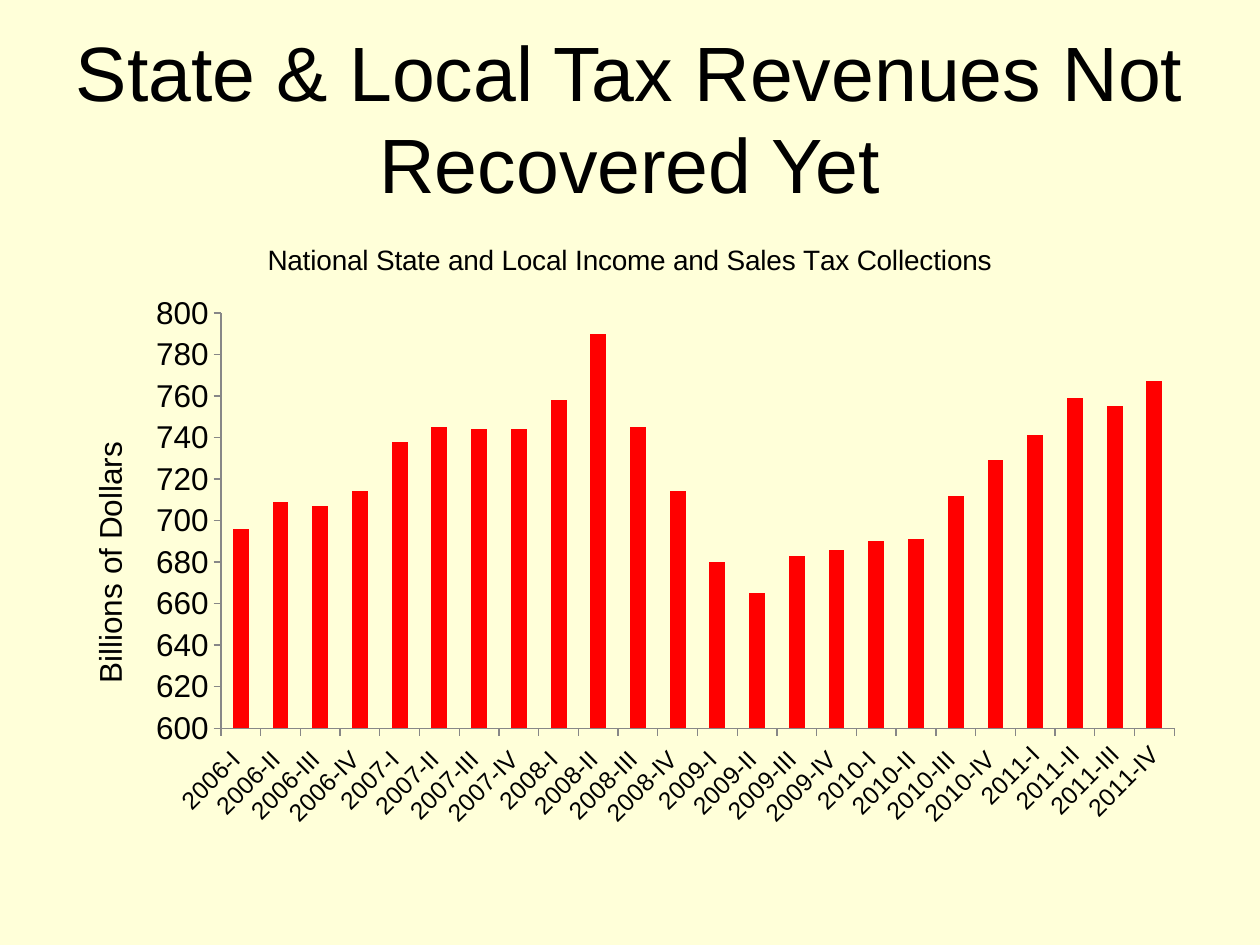
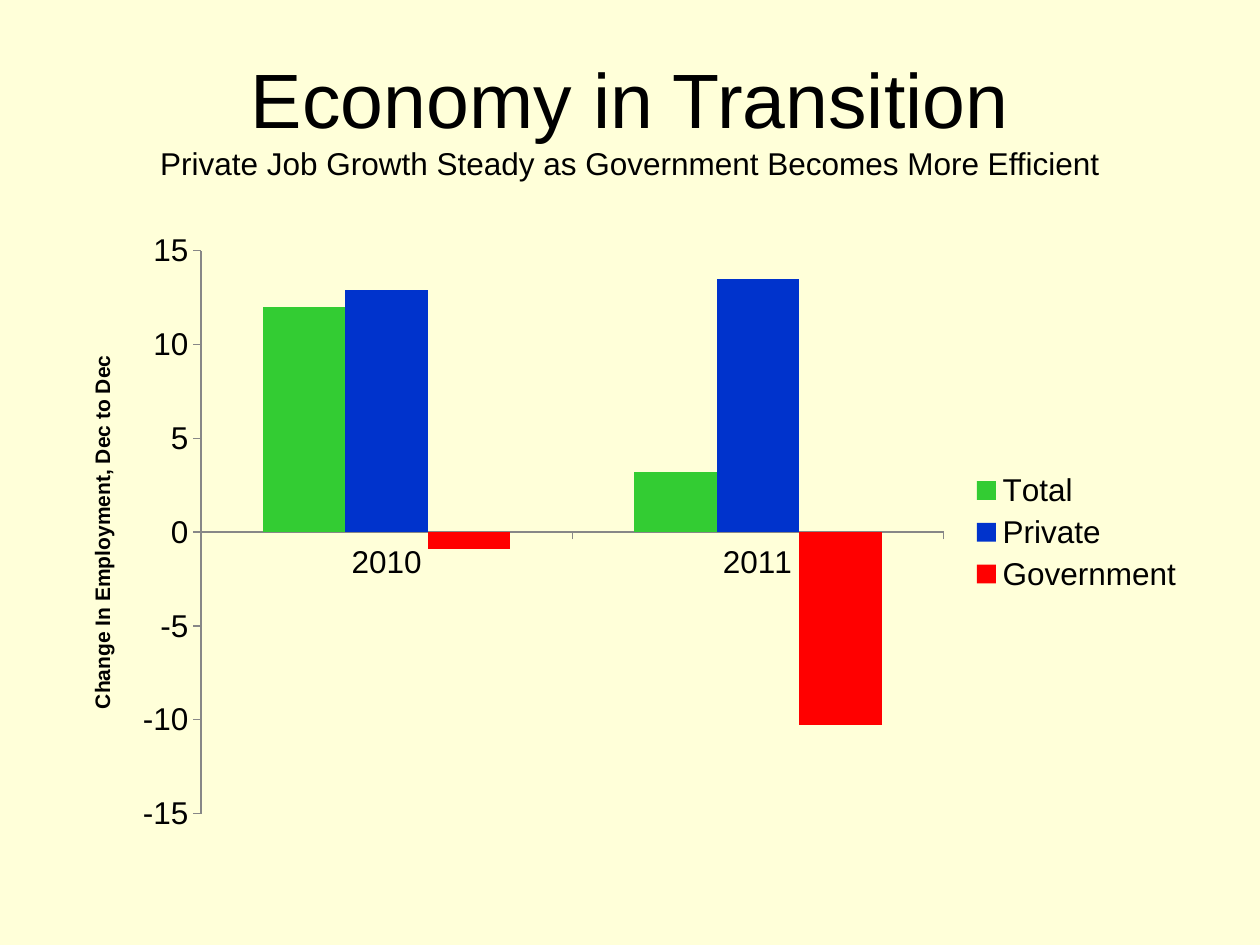
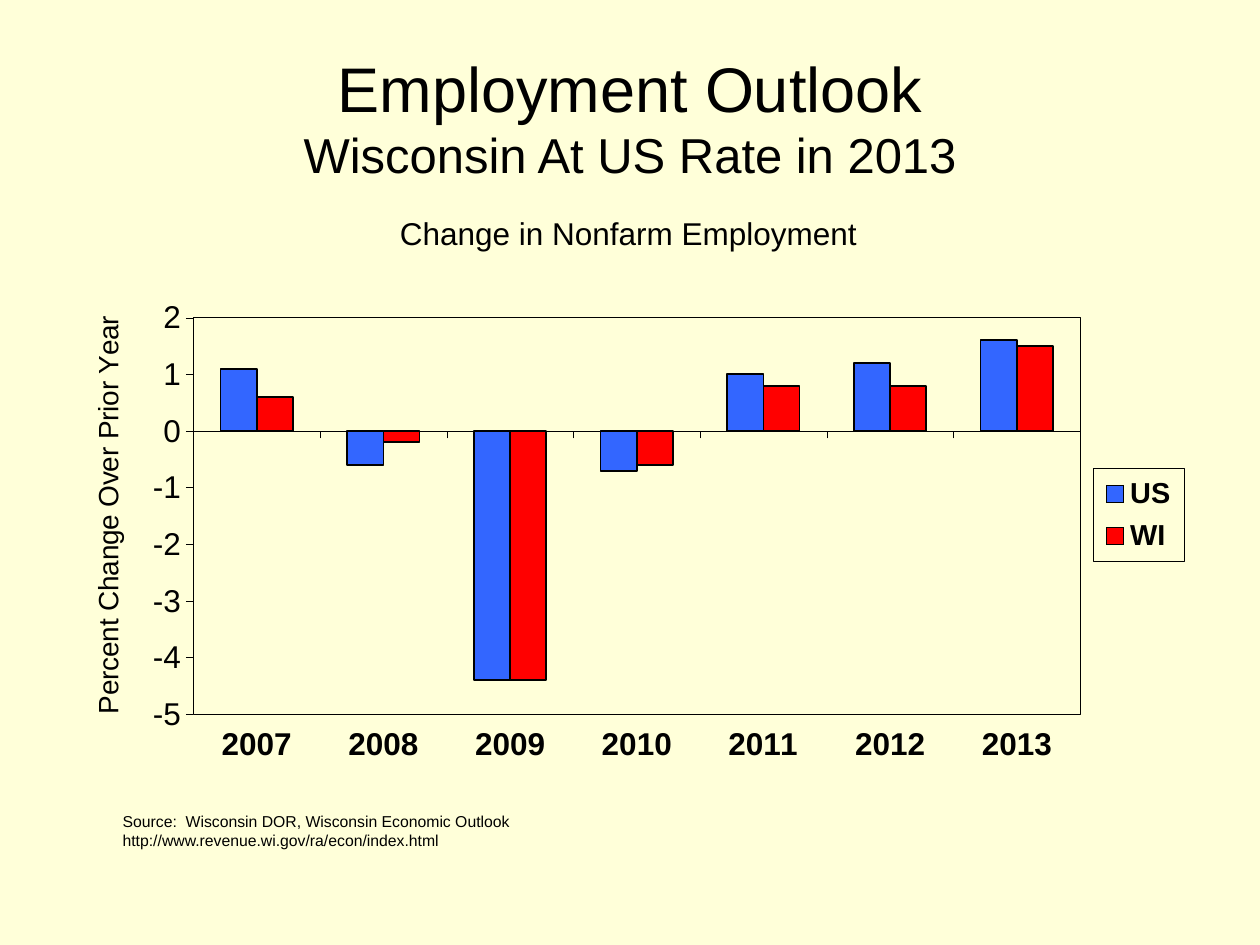
import dataclasses
import itertools

import pptx
import pptx.chart.data
import pptx.dml.color
import pptx.enum.chart
import pptx.enum.text
import pptx.oxml
import pptx.oxml.ns
import pptx.util

Pt = pptx.util.Pt


@dataclasses.dataclass(frozen=True)
class Theme:
    """Colours, type sizes and font of the whole deck."""
    font: str = "Arial"
    page: str = "FFFFD9"
    ink: str = "000000"
    axis: str = "878787"
    red: str = "FF0000"
    green: str = "33CC33"
    navy: str = "0033CC"
    blue: str = "3366FF"
    title: float = 44
    head: float = 36
    lead: float = 28
    text: float = 18
    key: float = 16.5
    label: float = 16
    tick: float = 14
    small: float = 12
    note: float = 9


THEME = Theme()
TITLE_BOX = (36, 21.6, 648, 90)
CHART_BOX = (36, 126, 648, 356.4)
OUTLOOK_BOX = (40.32, 111.6, 639.36, 347.76)
NOTE_BOX = (63, 460.4, 235.4, 28.8)


def rgb(code):
    """Turn a hex code into a colour."""
    return pptx.dml.color.RGBColor.from_string(code)


def style(font, size, bold=False):
    """Give a font the deck's face and ink."""
    font.name = THEME.font
    font.size = Pt(size)
    font.bold = bold
    font.color.rgb = rgb(THEME.ink)


def write(frame, lines, size=THEME.text, bold=False, align=None, split=False):
    """Write lines, each a string or (string, size), as paragraphs or as line breaks."""
    para = frame.paragraphs[0]
    for index, line in enumerate(lines):
        text, points = (line, size) if isinstance(line, str) else line
        if index and split:
            para = frame.add_paragraph()
        elif index:
            para.add_line_break()
        para.alignment = align
        run = para.add_run()
        run.text = text
        style(run.font, points, bold)


def stroke(line, color, width):
    """Format an outline."""
    line.color.rgb = rgb(color)
    line.width = Pt(width)


def arrange(parent, index, box, spots, inner=False):
    """Fix the place of a chart part, in points from the corner of the chart's box."""
    for old in parent.findall(pptx.oxml.ns.qn("c:layout")):
        parent.remove(old)
    target = '<c:layoutTarget val="inner"/>' if inner else ""
    modes = '<c:xMode val="edge"/><c:yMode val="edge"/>'
    sizes = "".join(f'<c:{name} val="{spot / whole}"/>' for name, spot, whole
                    in zip("xywh", spots, box[2:] * 2))
    parent.insert(index, pptx.oxml.parse_xml(
        f'<c:layout {pptx.oxml.ns.nsdecls("c")}><c:manualLayout>'
        f'{target}{modes}{sizes}</c:manualLayout></c:layout>'))


def outline(width):
    """Make the properties of an unfilled box with an ink outline."""
    return pptx.oxml.parse_xml(
        f'<c:spPr {pptx.oxml.ns.nsdecls("c", "a")}><a:noFill/><a:ln w="{Pt(width)}">'
        f'<a:solidFill><a:srgbClr val="{THEME.ink}"/></a:solidFill></a:ln></c:spPr>')


def add_title(slide, lines, size=THEME.title):
    """Place and fill the slide's title."""
    shape = slide.shapes.title
    shape.left, shape.top, shape.width, shape.height = map(Pt, TITLE_BOX)
    frame = shape.text_frame
    frame.auto_size = pptx.enum.text.MSO_AUTO_SIZE.NONE
    frame.vertical_anchor = pptx.enum.text.MSO_ANCHOR.MIDDLE
    write(frame, lines, size=size, align=pptx.enum.text.PP_ALIGN.CENTER)


def set_axis(axis, size, bold, color, width):
    """Format what both axes share."""
    axis.has_major_gridlines = False
    axis.major_tick_mark = pptx.enum.chart.XL_TICK_MARK.OUTSIDE
    axis.minor_tick_mark = pptx.enum.chart.XL_TICK_MARK.NONE
    stroke(axis.format.line, color, width)
    style(axis.tick_labels.font, size, bold)


def add_chart(slide, box, cats, series, scale, plot, label, spot,
              label_size=THEME.text, label_bold=False, cat_size=THEME.text,
              cat_bold=False, line=(THEME.axis, 0.75), border=None):
    """Draw columns from (name, values, colour) series on a (low, high, step) scale."""
    data = pptx.chart.data.CategoryChartData()
    data.categories = cats
    for name, values, color in series:
        data.add_series(name, values)
    kind = pptx.enum.chart.XL_CHART_TYPE.COLUMN_CLUSTERED
    chart = slide.shapes.add_chart(kind, *map(Pt, box), data).chart
    chart.has_title = False
    chart.has_legend = False
    style(chart.font, THEME.text)
    bars = chart.plots[0]
    bars.gap_width = 150
    bars.overlap = 0
    bars.vary_by_categories = False
    for bar, (name, values, color) in zip(bars.series, series):
        bar.invert_if_negative = False
        bar.format.fill.solid()
        bar.format.fill.fore_color.rgb = rgb(color)
        if border:
            stroke(bar.format.line, THEME.ink, border)
    set_axis(chart.category_axis, cat_size, cat_bold, *line)
    axis = chart.value_axis
    set_axis(axis, THEME.text, False, *line)
    axis.minimum_scale, axis.maximum_scale, axis.major_unit = scale
    write(axis.axis_title.text_frame, [label], size=label_size, bold=label_bold)
    tree = chart._chartSpace
    body = tree.xpath("//c:valAx/c:title//a:bodyPr")[0]
    body.set("rot", "-5400000")
    body.set("vert", "horz")
    arrange(tree.xpath("//c:valAx/c:title")[0], 1, box, spot)
    arrange(tree.xpath("//c:plotArea")[0], 0, box, plot, inner=True)
    return chart


def add_head(chart, box, text, size, spot):
    """Put a heading inside the chart."""
    write(chart.chart_title.text_frame, [text], size=size)
    arrange(chart._chartSpace.xpath("c:chart/c:title")[0], 1, box, spot)


def add_key(chart, size=THEME.text, bold=False):
    """Put a legend at the right of the chart."""
    chart.has_legend = True
    chart.legend.position = pptx.enum.chart.XL_LEGEND_POSITION.RIGHT
    chart.legend.include_in_layout = False
    style(chart.legend.font, size, bold)


def show_tax(slide):
    """Build the slide on tax revenues."""
    add_title(slide, ["State & Local Tax Revenues Not Recovered Yet"])
    parts = ("I", "II", "III", "IV")
    cats = [f" {year}-{part} " for year, part in itertools.product(range(2006, 2011), parts)]
    cats += [f"2011-{part}" for part in parts]
    values = [696, 709, 707, 714, 738, 745, 744, 744, 758, 790, 745, 714,
              680, 665, 683, 686, 690, 691, 712, 729, 741, 759, 755, 767]
    chart = add_chart(slide, CHART_BOX, cats, [("Series 1", values, THEME.red)],
                      (600, 800, 20), (90.3, 52.8, 544.8, 237.4),
                      "Billions of Dollars", (11.7, 123.3), cat_size=THEME.tick)
    chart._chartSpace.xpath("//c:catAx/c:txPr/a:bodyPr")[0].set("rot", "-2700000")
    add_head(chart, CHART_BOX, "National State and Local Income and Sales Tax Collections",
             THEME.label, (114, 9.7))


def show_jobs(slide):
    """Build the slide on private and public jobs."""
    add_title(slide, ["Economy in Transition",
                      ("Private Job Growth Steady as Government Becomes More Efficient",
                       THEME.text)])
    series = [("Total", (12, 3.2), THEME.green),
              ("Private", (12.9, 13.5), THEME.navy),
              ("Government", (-0.9, -10.3), THEME.red)]
    chart = add_chart(slide, CHART_BOX, ["2010", "2011"], series, (-15, 15, 5),
                      (78.8, 17.2, 424.5, 321.8), "Change In Employment, Dec to Dec",
                      (12.8, 75), label_size=THEME.small, label_bold=True)
    add_key(chart)


def show_outlook(slide):
    """Build the slide on the employment outlook."""
    add_title(slide, ["Employment Outlook", ("Wisconsin At US Rate in 2013", THEME.lead)],
              size=THEME.head)
    series = [("US", (1.1, -0.6, -4.4, -0.7, 1, 1.2, 1.6), THEME.blue),
              ("WI", (0.6, -0.2, -4.4, -0.6, 0.8, 0.8, 1.5), THEME.red)]
    chart = add_chart(slide, OUTLOOK_BOX, [str(year) for year in range(2007, 2014)],
                      series, (-5, 2, 1), (70.2, 70, 506.8, 226.6),
                      "Percent Change Over Prior Year", (8.3, 66),
                      label_size=THEME.label, cat_bold=True,
                      line=(THEME.ink, 0.25), border=1)
    low = pptx.enum.chart.XL_TICK_LABEL_POSITION.LOW
    chart.category_axis.tick_label_position = low
    chart._chartSpace.xpath("c:chart/c:plotArea")[0].append(outline(0.75))
    add_head(chart, OUTLOOK_BOX, "Change in Nonfarm Employment", THEME.text, (185, 7))
    add_key(chart, size=THEME.key, bold=True)
    key = chart.legend._element
    arrange(key, 1, OUTLOOK_BOX, (584.3, 155.8, 52, 53.5))
    key.find(pptx.oxml.ns.qn("c:txPr")).addprevious(outline(0.25))
    frame = slide.shapes.add_textbox(*map(Pt, NOTE_BOX)).text_frame
    frame.word_wrap = False
    write(frame, ["Source:  Wisconsin DOR, Wisconsin Economic Outlook",
                  "http://www.revenue.wi.gov/ra/econ/index.html"],
          size=THEME.note, split=True)


def main():
    """Build and save the deck."""
    deck = pptx.Presentation()
    deck.slide_width, deck.slide_height = Pt(720), Pt(540)
    fill = deck.slide_master.background.fill
    fill.solid()
    fill.fore_color.rgb = rgb(THEME.page)
    for show in (show_tax, show_jobs, show_outlook):
        show(deck.slides.add_slide(deck.slide_layouts[5]))
    deck.save("out.pptx")


if __name__ == "__main__":
    main()
